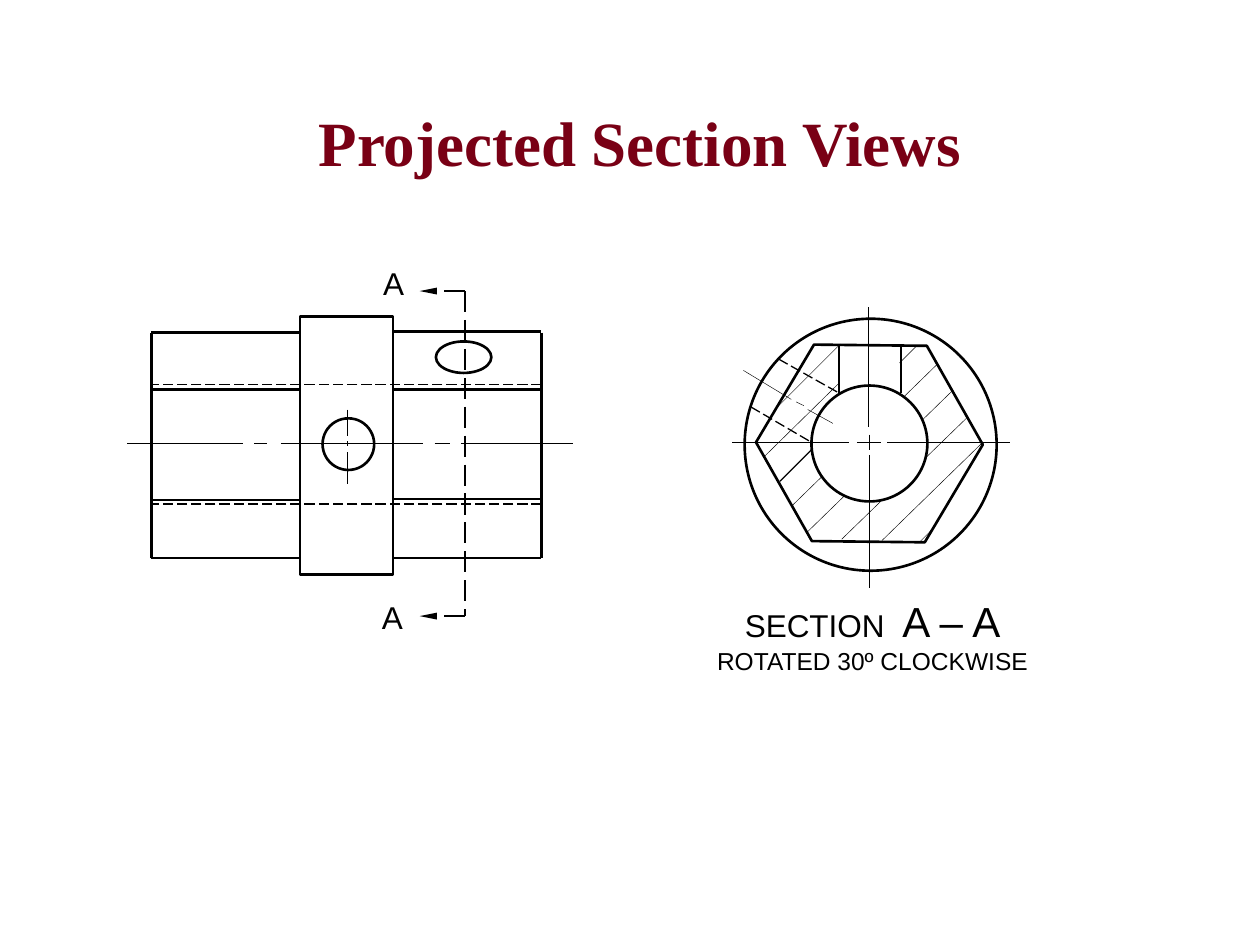
from dataclasses import dataclass

from lxml.etree import SubElement
from pptx import Presentation
from pptx.dml.color import RGBColor
from pptx.enum.dml import MSO_LINE
from pptx.enum.shapes import MSO_CONNECTOR, MSO_SHAPE
from pptx.enum.text import MSO_ANCHOR, MSO_AUTO_SIZE, PP_ALIGN
from pptx.oxml.ns import qn
from pptx.util import Inches, Pt


@dataclass
class Theme:
    ink: RGBColor = RGBColor(0, 0, 0)
    paper: RGBColor = RGBColor(255, 255, 255)
    maroon: RGBColor = RGBColor(0x79, 0x00, 0x15)
    serif: str = "Times New Roman"
    sans: str = "Arial"
    title: int = 36
    large: int = 24
    label: int = 18
    small: int = 14
    bold: float = 1.5
    thin: float = 0.75
    hair: float = 0.25


theme = Theme()


def add_line(shapes, ends, width, dashed=False, arrow=False):
    line = shapes.add_connector(MSO_CONNECTOR.STRAIGHT, *(Inches(v) for v in ends))
    line.line.color.rgb = theme.ink
    line.line.width = Pt(width)
    if dashed:
        line.line.dash_style = MSO_LINE.LONG_DASH
    if arrow:
        SubElement(line.line._get_or_add_ln(), qn("a:tailEnd"), type="triangle", w="sm", len="lg")
    SubElement(line._element.spPr, qn("a:effectLst"))


def add_outline(kind, box, turn=0, fill=None):
    shape = shapes.add_shape(kind, *(Inches(v) for v in box))
    shape.shadow.inherit = False
    shape.rotation = turn
    shape.line.color.rgb = theme.ink
    shape.line.width = Pt(theme.bold)
    if fill is None:
        shape.fill.background()
    else:
        shape.fill.solid()
        shape.fill.fore_color.rgb = fill
    return shape


deck = Presentation()
deck.slide_width, deck.slide_height = Inches(10), Inches(7.5)
slide = deck.slides.add_slide(deck.slide_layouts[5])
shapes = slide.shapes

title = shapes.title
title.left, title.top, title.width, title.height = (Inches(v) for v in (0.83, 0.83, 8.5, 0.67))
title.text_frame.text = "Projected Section Views"
title.text_frame.vertical_anchor = MSO_ANCHOR.MIDDLE
head = title.text_frame.paragraphs[0]
head.alignment = PP_ALIGN.CENTER
head.line_spacing = 0.88
head.font.name, head.font.size, head.font.bold = theme.serif, Pt(theme.title), True
head.font.color.rgb = theme.maroon

for y in (2.64, 3.09, 3.97, 4.43):
    add_line(shapes, (1.2, y, 2.37, y), theme.bold)
for y in (2.63, 3.09, 3.96, 4.43):
    add_line(shapes, (3.13, y, 4.29, y), theme.bold)
for x in (1.2, 4.3):
    add_line(shapes, (x, 2.64, x, 4.43), theme.bold)
for y in (3.05, 4):
    add_line(shapes, (4.3, y, 1.2, y), theme.thin, dashed=True)
for start, end in ((1.01, 1.93), (2.02, 2.12), (2.23, 3.36), (3.45, 3.57), (3.66, 4.55)):
    add_line(shapes, (start, 3.52, end, 3.52), theme.thin)

collar = add_outline(MSO_SHAPE.RECTANGLE, (2.38, 2.51, 0.74, 2.05))
hole = add_outline(MSO_SHAPE.OVAL, (2.56, 3.32, 0.41, 0.41))
slot = add_outline(MSO_SHAPE.OVAL, (3.46, 2.71, 0.44, 0.25))
cross = shapes.add_group_shape()
for start, end in ((3.25, 3.46), (3.5, 3.54), (3.59, 3.84)):
    add_line(cross.shapes, (2.76, start, 2.76, end), theme.thin)

add_line(shapes, (3.69, 2.31, 3.69, 4.89), theme.bold, dashed=True)
for y in (2.31, 4.89):
    add_line(shapes, (3.69, y, 3.33, y), theme.bold, dashed=True, arrow=True)

hexagon = add_outline(MSO_SHAPE.HEXAGON, (6, 2.74, 1.8, 1.56), turn=0.6)
hexagon.adjustments[0] = 0.29
hatches = (
    (6.67, 2.73, 6.18, 3.22),
    (6.66, 3.04, 6.07, 3.62),
    (7.27, 2.75, 7.14, 2.88),
    (7.44, 2.89, 6.29, 4.01),
    (7.56, 3.1, 6.41, 4.22),
    (7.67, 3.32, 6.68, 4.28),
    (7.8, 3.51, 7, 4.29),
    (7.41, 4.19, 7.3, 4.3),
)
for ends in hatches:
    add_line(shapes, ends, theme.hair)
bore = add_outline(MSO_SHAPE.OVAL, (6.44, 3.06, 0.92, 0.92), turn=0.6, fill=theme.paper)
for x, start, end in ((6.89, 2.44, 3.39), (6.9, 3.45, 3.57), (6.9, 3.61, 4.67)):
    add_line(shapes, (x, start, x, end), theme.hair)
for start, end in ((5.81, 6.74), (6.8, 6.99), (7.04, 8.02)):
    add_line(shapes, (start, 3.51, end, 3.51), theme.hair)
rim = add_outline(MSO_SHAPE.OVAL, (5.91, 2.53, 2, 2), turn=30)

for x in (6.66, 7.15):
    add_line(shapes, (x, 2.74, x, 3.12), theme.bold)
add_line(shapes, (6.44, 3.57, 6.19, 3.82), theme.thin)
for ends in ((5.9, 2.94, 6.28, 3.17), (6.32, 3.19, 6.38, 3.22), (6.41, 3.25, 6.61, 3.36)):
    add_line(shapes, ends, theme.hair)
for ends in ((6.18, 2.85, 6.66, 3.12), (5.96, 3.23, 6.44, 3.51)):
    add_line(shapes, ends, theme.thin, dashed=True)

mark = [[("A", theme.label)]]
caption = [
    [("SECTION  ", theme.label), ("A – A", theme.large)],
    [("ROTATED 30º CLOCKWISE", theme.small)],
]
labels = (
    ((2.94, 2.05, 0.37, 0.4), mark),
    ((2.93, 4.7, 0.37, 0.4), mark),
    ((5.58, 4.68, 2.69, 0.73), caption),
)
for box, rows in labels:
    frame = shapes.add_textbox(*(Inches(v) for v in box)).text_frame
    frame.word_wrap = False
    frame.auto_size = MSO_AUTO_SIZE.SHAPE_TO_FIT_TEXT
    frame.text = "\n".join("" for row in rows)
    for para, row in zip(frame.paragraphs, rows):
        para.alignment = PP_ALIGN.CENTER
        for text, size in row:
            run = para.add_run()
            run.text = text
            run.font.name, run.font.size = theme.sans, Pt(size)
            run.font.color.rgb = theme.ink

deck.save("out.pptx")
